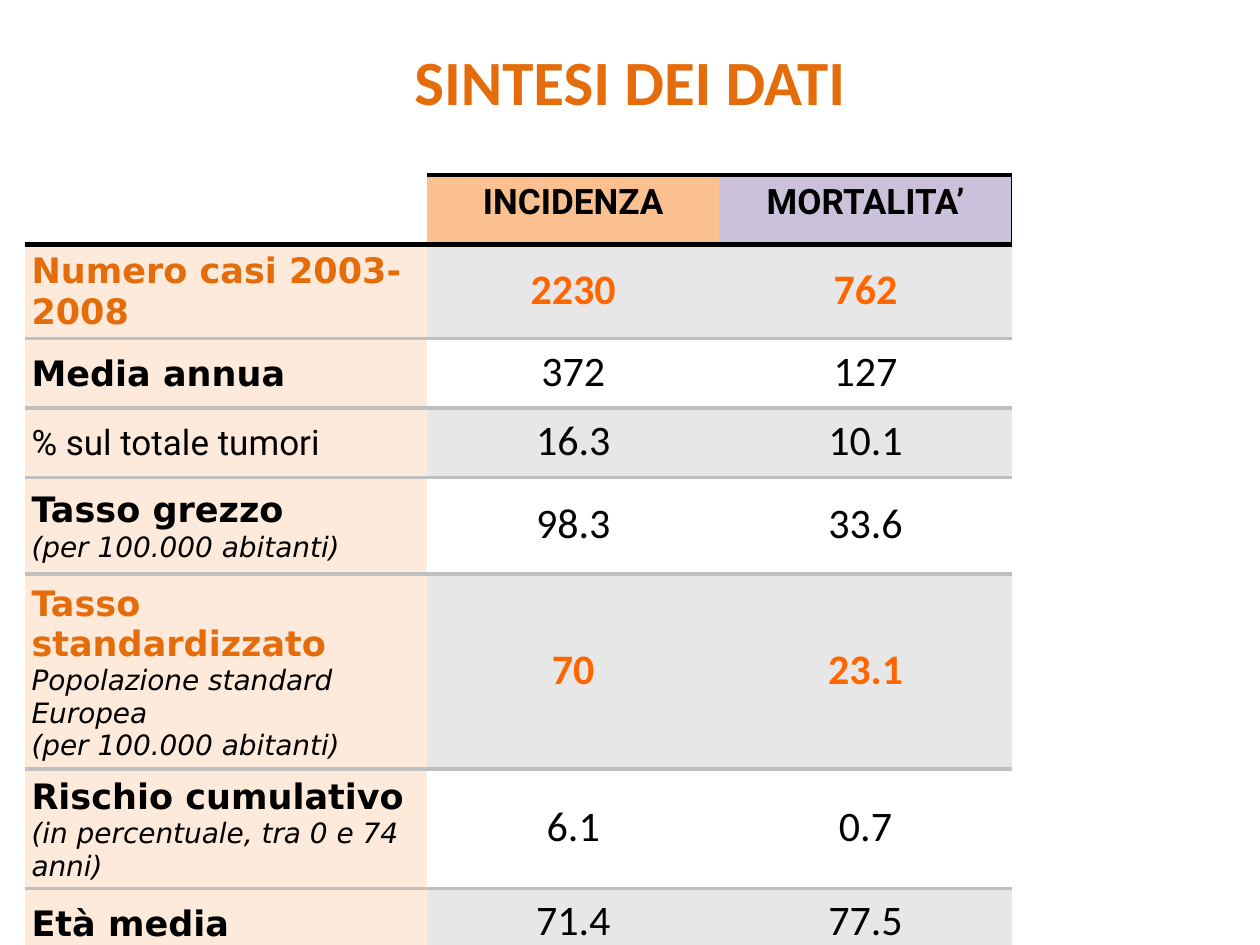
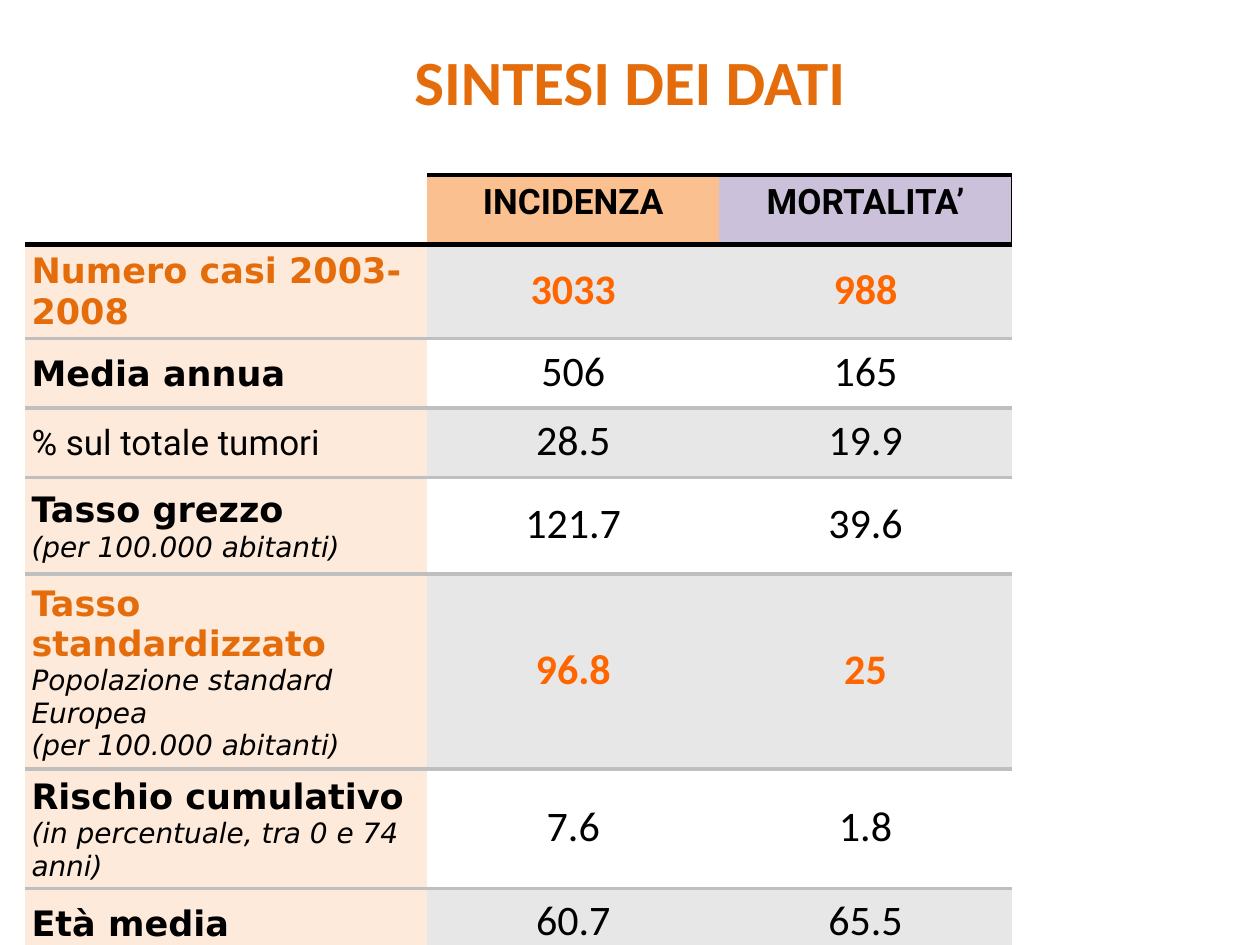
from lxml import etree
from pptx import Presentation
from pptx import util as u
from pptx.dml.color import RGBColor
from pptx.enum import text
from pptx.oxml import ns

COLORS = {
    "accent": "E46C0A", "highlight": "FF6600", "ink": "000000", "rule": "BFBFBF",
    "incidence": "FAC090", "mortality": "CCC1DA", "label": "FDEADA",
    "odd": "E7E7E7", "even": "FFFFFF",
}
NO_STYLE = "{2D5ABB26-0587-4C30-8999-92F81FD0307C}"
MIDDLE = text.MSO_ANCHOR.MIDDLE
CENTER = text.PP_ALIGN.CENTER

TITLE = "SINTESI DEI DATI"
HEADINGS = [("INCIDENZA", "incidence"), ("MORTALITA’", "mortality")]
MEASURES = [
    ["Numero casi 2003-2008"],
    ["Media annua"],
    ["% sul totale tumori"],
    ["Tasso grezzo", "(per 100.000 abitanti)"],
    ["Tasso standardizzato", "Popolazione standard Europea", "(per 100.000 abitanti)"],
    ["Rischio cumulativo", "(in percentuale, tra 0 e 74 anni)"],
    ["Età media"],
]
HIGHLIGHTED = (1, 5)
PLAIN = 3
SUMMARIES = [
    [("2230", "762"), ("372", "127"), ("16.3", "10.1"), ("98.3", "33.6"),
     ("70", "23.1"), ("6.1", "0.7"), ("71.4", "77.5")],
    [("3033", "988"), ("506", "165"), ("28.5", "19.9"), ("121.7", "39.6"),
     ("96.8", "25"), ("7.6", "1.8"), ("60.7", "65.5")],
]
COLUMN_WIDTHS = [3.19, 2.32, 2.32]
ROW_HEIGHTS = [0.55] + [0.77 if len(lines) > 1 else 0.55 for lines in MEASURES]
TABLE_HEIGHT = 5.26


def write(paragraph, words, size, font, color="ink", bold=False, italic=False, align=None):
    paragraph.text = words
    paragraph.alignment = align
    paragraph.font.size = u.Pt(size)
    paragraph.font.name = font
    paragraph.font.bold = bold
    paragraph.font.italic = italic
    paragraph.font.color.rgb = RGBColor.from_string(COLORS[color])


def dress(cell, fill, inset, bottom, borders):
    cell.margin_left = cell.margin_right = cell.margin_top = u.Inches(inset)
    cell.margin_bottom = u.Inches(bottom)
    if fill:
        cell.fill.solid()
        cell.fill.fore_color.rgb = RGBColor.from_string(COLORS[fill])
    properties = cell._tc.get_or_add_tcPr()
    sides = [side for side in "RTB" if side in borders]
    for position, side in enumerate(sides):
        color, width = borders[side]
        line = etree.Element(ns.qn("a:ln" + side), w=str(u.Pt(width)))
        solid = etree.SubElement(line, ns.qn("a:solidFill"))
        etree.SubElement(solid, ns.qn("a:srgbClr"), val=COLORS[color])
        properties.insert(position, line)


deck = Presentation()
deck.slide_width, deck.slide_height = u.Inches(10), u.Inches(7.5)
heavy, thin = ("ink", 3), ("rule", 2.25)

for summary in SUMMARIES:
    slide = deck.slides.add_slide(deck.slide_layouts[6])

    heading = slide.shapes.add_textbox(
        u.Inches(0.5), u.Inches(0.2), u.Inches(9), u.Inches(0.87)).text_frame
    heading.word_wrap = True
    heading.vertical_anchor = MIDDLE
    write(heading.paragraphs[0], TITLE, 36, "Calibri", "accent", bold=True, align=CENTER)

    synthesis = slide.shapes.add_table(
        len(ROW_HEIGHTS), len(COLUMN_WIDTHS), u.Inches(0.2), u.Inches(1.39),
        u.Inches(sum(COLUMN_WIDTHS)), u.Inches(TABLE_HEIGHT))
    grid = synthesis.table
    grid.first_row = grid.horz_banding = False
    grid._tbl.tblPr.find(ns.qn("a:tableStyleId")).text = NO_STYLE
    for column, width in zip(grid.columns, COLUMN_WIDTHS):
        column.width = u.Inches(width)
    for row, height in zip(grid.rows, ROW_HEIGHTS):
        row.height = u.Inches(height)
    synthesis.height = u.Inches(TABLE_HEIGHT)

    dress(grid.cell(0, 0), None, 0.05, 0.05, {"B": heavy})
    for column, (name, fill) in enumerate(HEADINGS, 1):
        cell = grid.cell(0, column)
        write(cell.text_frame.paragraphs[0], name, 20, "Roboto", bold=True, align=CENTER)
        edge = {"R": ("ink", 1)} if column == len(HEADINGS) else {}
        dress(cell, fill, 0.05, 0.05, {"T": heavy, "B": heavy, **edge})

    for row, (lines, values) in enumerate(zip(MEASURES, summary), 1):
        strong = row in HIGHLIGHTED
        borders = {"T": heavy if row == 1 else thin, "B": thin}

        label = grid.cell(row, 0)
        label.vertical_anchor = text.MSO_ANCHOR.TOP if row == 1 else MIDDLE
        dress(label, "label", 0.05, 0.03, borders)
        frame = label.text_frame
        write(frame.paragraphs[0], lines[0], 20, "Roboto" if row == PLAIN else "DejaVu Sans",
              "accent" if strong else "ink", bold=row != PLAIN)
        for detail in lines[1:]:
            write(frame.add_paragraph(), detail, 16, "DejaVu Sans", italic=True)

        for column, value in enumerate(values, 1):
            cell = grid.cell(row, column)
            cell.vertical_anchor = MIDDLE
            dress(cell, "odd" if row % 2 else "even", 0.01, 0, borders)
            figure = cell.text_frame.paragraphs[0]
            figure.line_spacing = 0.8
            write(figure, value, 24, "Calibri", "highlight" if strong else "ink",
                  bold=strong, align=CENTER)

deck.save("out.pptx")
